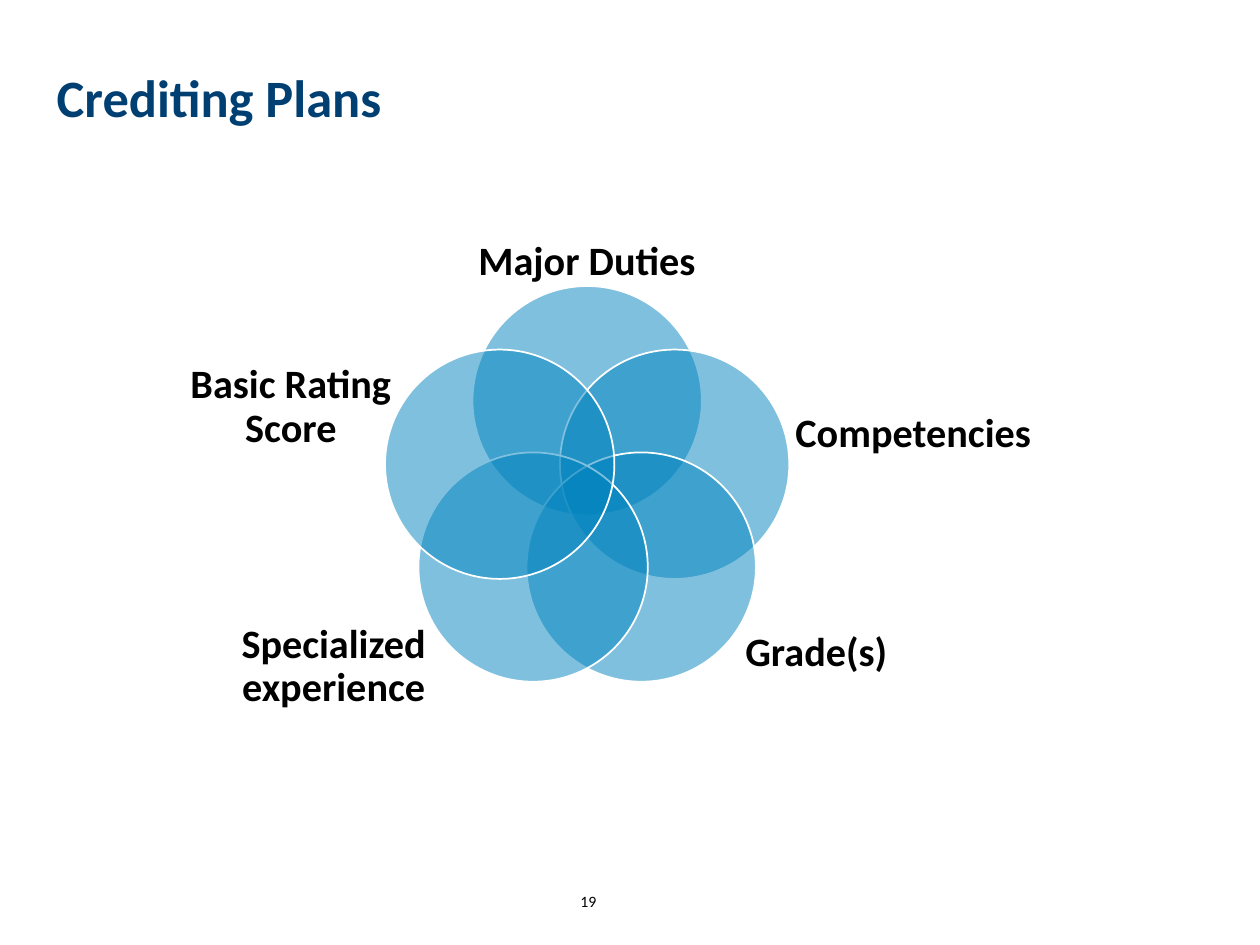
import dataclasses
import math

import lxml.etree
import pptx
import pptx.dml.color
import pptx.enum.shapes
import pptx.enum.text
import pptx.oxml.ns
import pptx.util

COLUMNS, ROWS = 100, 75
CELL = pptx.util.Inches(0.1)


@dataclasses.dataclass(frozen=True)
class Theme:
    font: str = "Calibri"
    title_color: str = "003F72"
    circle_color: str = "0083BE"
    outline_color: str = "FFFFFF"
    text_color: str = "000000"
    title_size: int = 30
    label_size: int = 23
    number_size: int = 9
    line_spacing: float = 0.9
    circle_opacity: int = 50


@dataclasses.dataclass(frozen=True)
class Area:
    column: float
    row: float
    columns: float
    rows: float

    def lengths(self) -> list[int]:
        return [round(cells * CELL) for cells in dataclasses.astuple(self)]


@dataclasses.dataclass(frozen=True)
class Petal:
    label: str
    label_area: Area


THEME = Theme()
CENTER_COLUMN, CENTER_ROW = 46.6, 39.1
RING_RADIUS, CIRCLE_DIAMETER = 7.3, 18.2
TITLE_AREA = Area(3.5, 3.7, 79.7, 8.5)
NUMBER_AREA = Area(43.9, 69.5, 5.6, 4)
PETALS = [
    Petal("Major Duties", Area(36, 14.7, 21.2, 12.3)),
    Petal("Competencies", Area(63, 27.8, 19, 13.3)),
    Petal("Grade(s)", Area(55.3, 45.2, 19, 13.3)),
    Petal("Specialized experience", Area(17, 46.3, 19, 13.3)),
    Petal("Basic Rating Score", Area(13.6, 25.7, 19, 13.3)),
]


def rgb(color: str) -> pptx.dml.color.RGBColor:
    return pptx.dml.color.RGBColor.from_string(color)


def write_text(shape, text: str, size: int, color: str, bold: bool, alignment,
               line_spacing: float) -> None:
    frame = shape.text_frame
    frame.word_wrap = True
    frame.auto_size = pptx.enum.text.MSO_AUTO_SIZE.NONE
    frame.vertical_anchor = pptx.enum.text.MSO_ANCHOR.MIDDLE
    frame.text = text
    paragraph = frame.paragraphs[0]
    paragraph.alignment = alignment
    paragraph.line_spacing = line_spacing
    font = paragraph.runs[0].font
    font.name, font.size, font.bold = THEME.font, pptx.util.Pt(size), bold
    font.color.rgb = rgb(color)


def add_title(slide, text: str) -> None:
    title = slide.shapes.title
    title.left, title.top, title.width, title.height = TITLE_AREA.lengths()
    write_text(title, text, THEME.title_size, THEME.title_color, True,
               pptx.enum.text.PP_ALIGN.LEFT, THEME.line_spacing)


def add_circle(slide, angle: float) -> None:
    radius = CIRCLE_DIAMETER / 2
    area = Area(CENTER_COLUMN + RING_RADIUS * math.sin(angle) - radius,
                CENTER_ROW - RING_RADIUS * math.cos(angle) - radius,
                CIRCLE_DIAMETER, CIRCLE_DIAMETER)
    circle = slide.shapes.add_shape(pptx.enum.shapes.MSO_SHAPE.OVAL, *area.lengths())
    circle.shadow.inherit = False
    circle.fill.solid()
    circle.fill.fore_color.rgb = rgb(THEME.circle_color)
    circle.line.color.rgb = rgb(THEME.outline_color)
    circle.line.width = pptx.util.Pt(1)
    fill_color = circle.element.spPr.find(
        pptx.oxml.ns.qn("a:solidFill") + "/" + pptx.oxml.ns.qn("a:srgbClr"))
    lxml.etree.SubElement(fill_color, pptx.oxml.ns.qn("a:alpha"),
                          val=str(THEME.circle_opacity * 1000))


def add_label(slide, petal: Petal) -> None:
    label = slide.shapes.add_textbox(*petal.label_area.lengths())
    frame = label.text_frame
    frame.margin_left = frame.margin_right = frame.margin_top = frame.margin_bottom = 0
    write_text(label, petal.label, THEME.label_size, THEME.text_color, True,
               pptx.enum.text.PP_ALIGN.CENTER, THEME.line_spacing)


def add_page_number(slide, number: int) -> None:
    box = slide.shapes.add_textbox(*NUMBER_AREA.lengths())
    write_text(box, str(number), THEME.number_size, THEME.text_color, False,
               pptx.enum.text.PP_ALIGN.CENTER, 1.0)


def main() -> None:
    presentation = pptx.Presentation()
    presentation.slide_width = COLUMNS * CELL
    presentation.slide_height = ROWS * CELL
    slide = presentation.slides.add_slide(presentation.slide_layouts[5])
    add_title(slide, "Crediting Plans")
    for index, petal in enumerate(PETALS):
        add_circle(slide, math.tau * index / len(PETALS))
        add_label(slide, petal)
    add_page_number(slide, 19)
    presentation.save("out.pptx")


if __name__ == "__main__":
    main()
